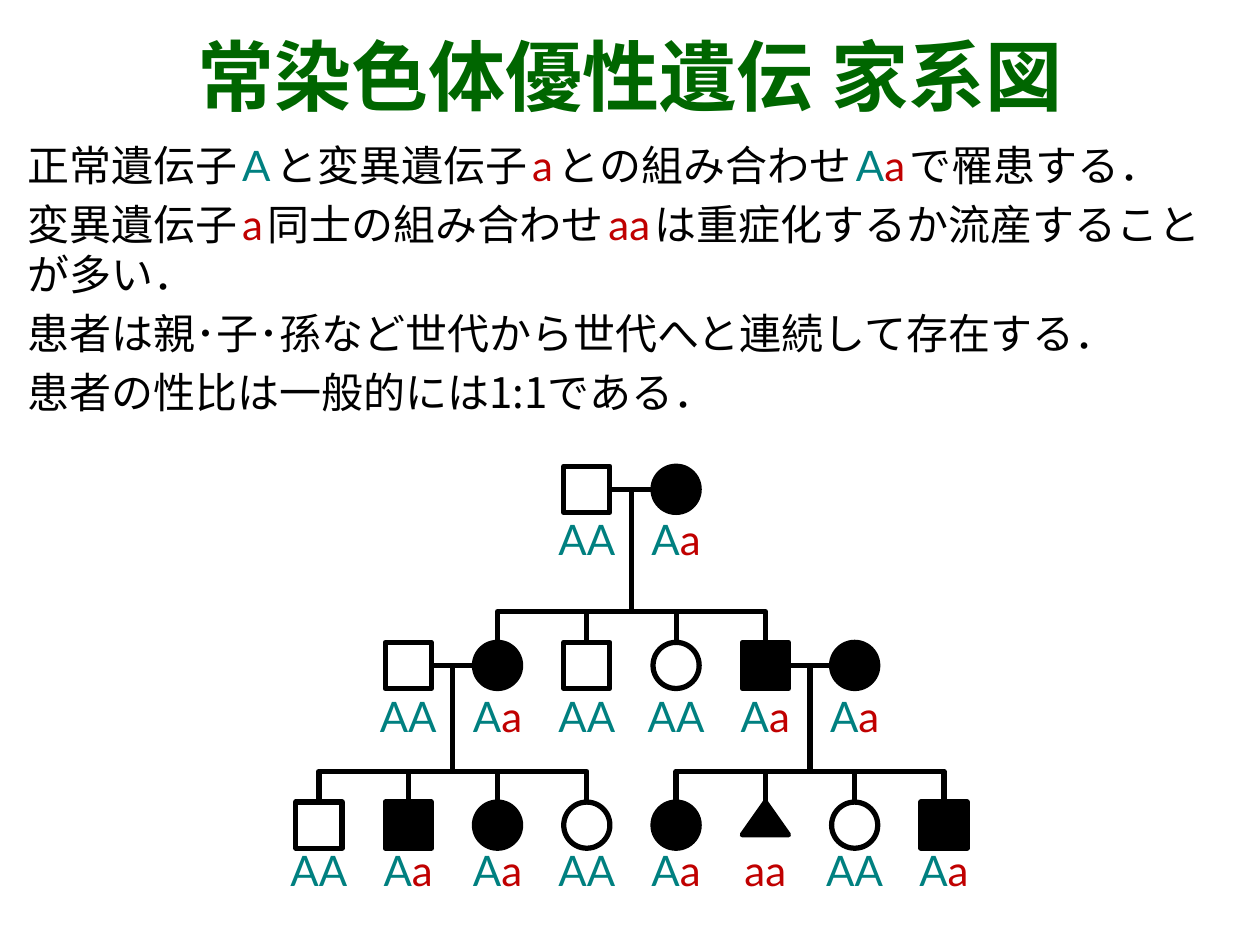
from itertools import groupby
from lxml.etree import SubElement
from pptx import Presentation
from pptx.dml.color import RGBColor
from pptx.enum.shapes import MSO_CONNECTOR, MSO_SHAPE as SHAPE
from pptx.enum.text import MSO_ANCHOR, MSO_AUTO_SIZE, PP_ALIGN
from pptx.oxml.ns import qn
from pptx.util import Cm, Pt

GREEN = RGBColor(0x00, 0x66, 0x00)
TEAL = RGBColor(0x00, 0x80, 0x80)
RED = RGBColor(0xC0, 0x00, 0x00)
BLACK = RGBColor(0x00, 0x00, 0x00)
KANJI, LATIN = "Noto Sans CJK JP", "Lato"
ALLELES = {"A": TEAL, "a": RED}

TITLE = "常染色体優性遺伝 家系図"
FACTS = [
    "正常遺伝子 A と変異遺伝子 a との組み合わせ Aa で罹患する．",
    "変異遺伝子 a 同士の組み合わせ aa は重症化するか流産することが多い．",
    "患者は親･子･孫など世代から世代へと連続して存在する．",
    "患者の性比は一般的には1:1である．",
]

SIZE, BAR_RISE = 0.93, 0.62
FIRST_X, PITCH = 6.43, 1.8
TOPS = [9.4, 12.95, 16.17]
LABEL_TOPS = [10.36, 13.92, 17.02]
MALE, FEMALE, LOST = SHAPE.RECTANGLE, SHAPE.OVAL, SHAPE.ISOSCELES_TRIANGLE
GENERATIONS = [
    (3, [(MALE, "AA"), (FEMALE, "Aa")]),
    (1, [(MALE, "AA"), (FEMALE, "Aa"), (MALE, "AA"),
         (FEMALE, "AA"), (MALE, "Aa"), (FEMALE, "Aa")]),
    (0, [(MALE, "AA"), (MALE, "Aa"), (FEMALE, "Aa"), (FEMALE, "AA"),
         (FEMALE, "Aa"), (LOST, "aa"), (FEMALE, "AA"), (MALE, "Aa")]),
]
FAMILIES = [(0, 3), (1, 1), (1, 5)]


def column_x(column):
    return FIRST_X + PITCH * column


def style_run(r, font, size, color, bold=False):
    r.font.name = font
    r.font.size = Pt(size)
    r.font.bold = bold
    r.font.color.rgb = color
    SubElement(r._r.get_or_add_rPr(), qn("a:ea")).set("typeface", font)


def write_genetics(p, text):
    for kind, chars in groupby(text, lambda c: c if c in "Aa " else ""):
        r = p.add_run()
        r.text = "".join(chars)
        if kind in ALLELES:
            style_run(r, LATIN, 24, ALLELES[kind])
        else:
            style_run(r, KANJI, 12 if kind == " " else 24, BLACK)


def place(sp, left, top, width, height):
    sp.left, sp.top, sp.width, sp.height = map(Cm, (left, top, width, height))


def fill_title(sp):
    place(sp, 0.71, 0.51, 24, 2)
    tf = sp.text_frame
    tf.text = TITLE
    tf.auto_size = MSO_AUTO_SIZE.NONE
    tf.vertical_anchor = MSO_ANCHOR.MIDDLE
    p = tf.paragraphs[0]
    p.alignment = PP_ALIGN.CENTER
    style_run(p.runs[0], KANJI, 44, GREEN, bold=True)


def fill_body(sp):
    place(sp, 0.3, 2.69, 25, 5.82)
    tf = sp.text_frame
    tf.auto_size = MSO_AUTO_SIZE.NONE
    for i, fact in enumerate(FACTS):
        p = tf.add_paragraph() if i else tf.paragraphs[0]
        pPr = p._p.get_or_add_pPr()
        pPr.set("marL", "0")
        pPr.set("indent", "0")
        SubElement(pPr, qn("a:buNone"))
        write_genetics(p, fact)


def set_line(s):
    s.line.color.rgb = BLACK
    s.line.width = Pt(3)


def add_line(s, x1, y1, x2, y2):
    line = s.shapes.add_connector(
        MSO_CONNECTOR.STRAIGHT, Cm(x1), Cm(y1), Cm(x2), Cm(y2))
    set_line(line)
    SubElement(line._element.spPr, qn("a:effectLst"))


def add_bracket(s, x1, x2, bar_y, foot_y):
    builder = s.shapes.build_freeform(Cm(x1), Cm(foot_y))
    builder.add_line_segments(
        [(Cm(x), Cm(y)) for x, y in ((x1, bar_y), (x2, bar_y), (x2, foot_y))],
        close=False)
    sp = builder.convert_to_shape()
    sp.shadow.inherit = False
    sp.fill.background()
    set_line(sp)


def add_family(s, generation, father):
    father_x, mother_x = column_x(father), column_x(father + 1)
    couple_y = TOPS[generation] + SIZE / 2
    child_y = TOPS[generation + 1]
    bar_y = child_y - BAR_RISE
    middle_x = (father_x + mother_x) / 2
    add_line(s, father_x + SIZE / 2, couple_y, mother_x - SIZE / 2, couple_y)
    add_line(s, middle_x, couple_y, middle_x, bar_y)
    add_bracket(s, column_x(father - 1), column_x(father + 2), bar_y, child_y)
    for x in (father_x, mother_x):
        add_line(s, x, bar_y, x, child_y)


def add_person(s, x, top, kind, genotype):
    height = 0.66 if kind == LOST else SIZE
    sp = s.shapes.add_shape(
        kind, Cm(x - SIZE / 2), Cm(top), Cm(SIZE), Cm(height))
    sp.shadow.inherit = False
    if "a" in genotype:
        sp.fill.solid()
        sp.fill.fore_color.rgb = BLACK
    else:
        sp.fill.background()
    set_line(sp)


def add_genotype(s, x, top, genotype):
    width = 1.42
    tf = s.shapes.add_textbox(
        Cm(x - width / 2), Cm(top), Cm(width), Cm(1.02)).text_frame
    tf.word_wrap = True
    tf.auto_size = MSO_AUTO_SIZE.SHAPE_TO_FIT_TEXT
    tf.margin_left = tf.margin_right = tf.margin_top = tf.margin_bottom = 0
    p = tf.paragraphs[0]
    p.alignment = PP_ALIGN.CENTER
    write_genetics(p, genotype)


def main():
    prs = Presentation()
    prs.slide_width, prs.slide_height = Cm(25.4), Cm(19.05)
    s = prs.slides.add_slide(prs.slide_layouts[1])
    fill_title(s.shapes.title)
    fill_body(s.placeholders[1])
    for generation, father in FAMILIES:
        add_family(s, generation, father)
    for top, label_top, (start, people) in zip(TOPS, LABEL_TOPS, GENERATIONS):
        for column, (kind, genotype) in enumerate(people, start):
            x = column_x(column)
            add_person(s, x, top, kind, genotype)
            add_genotype(s, x, label_top, genotype)
    prs.save("out.pptx")


if __name__ == "__main__":
    main()
